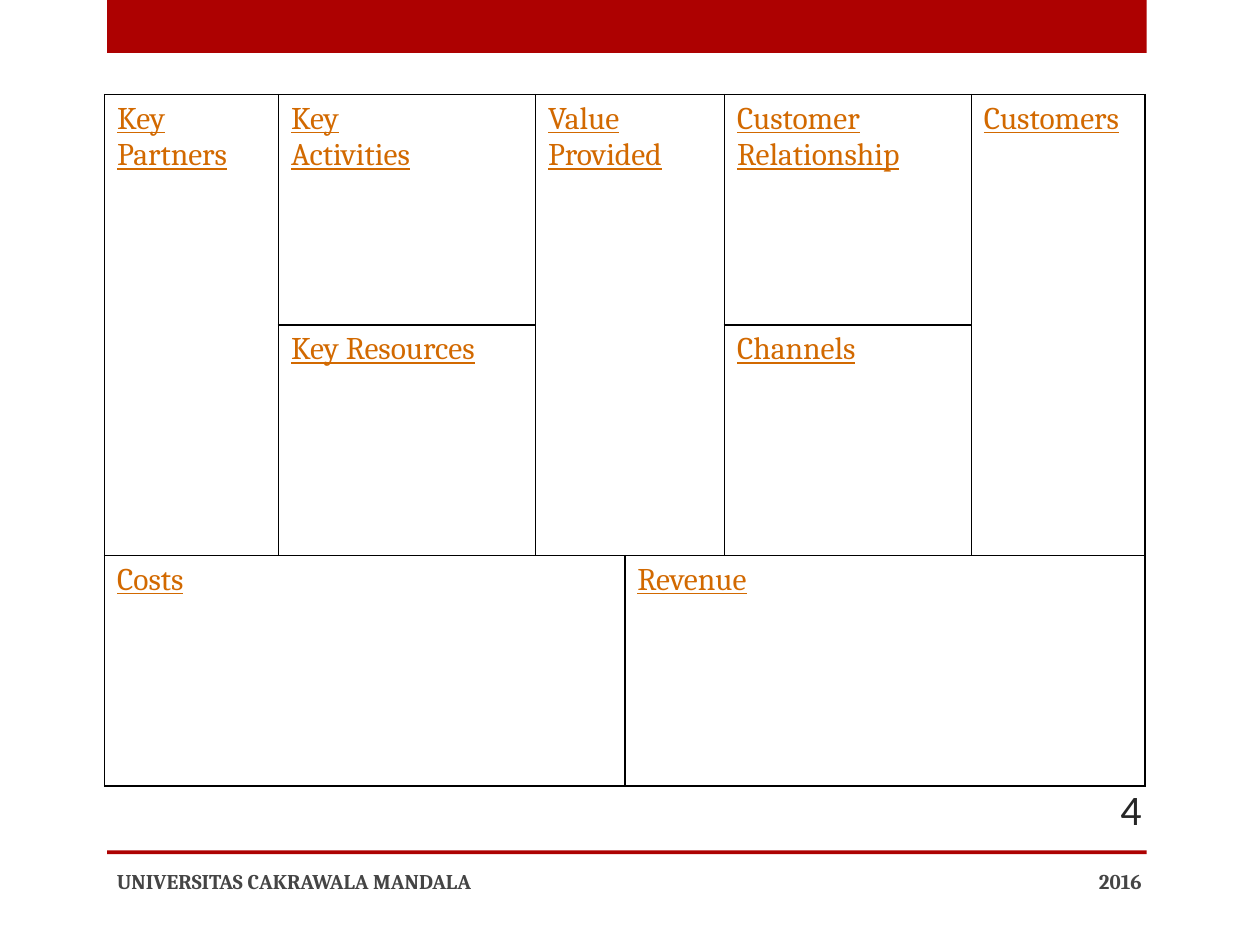
"""Builds a business model canvas slide with a header bar and footer."""
import pptx
import pptx.dml.color
import pptx.enum.shapes
import pptx.enum.text
import pptx.oxml.ns
import pptx.util
from lxml import etree

Inches = pptx.util.Inches
RGBColor = pptx.dml.color.RGBColor
ALIGN = pptx.enum.text.PP_ALIGN

RED = RGBColor(0xAD, 0x01, 0x01)
ORANGE = RGBColor(0xD2, 0x69, 0x00)
GRAY = RGBColor(0x45, 0x45, 0x45)
DARK = RGBColor(0x26, 0x26, 0x26)
BLACK = RGBColor(0, 0, 0)

COLUMN_WIDTHS = (1.38, 2.04, 0.71, 0.79, 1.96, 1.38)
ROW_HEIGHTS = (1.83, 1.83, 1.83)
CANVAS_BLOCKS = (
    (0, 0, 2, 1, "Key\nPartners"),
    (0, 1, 1, 1, "Key\nActivities"),
    (1, 1, 1, 1, "Key Resources"),
    (0, 2, 2, 2, "Value\nProvided"),
    (0, 4, 1, 1, "Customer\nRelationship"),
    (1, 4, 1, 1, "Channels"),
    (0, 5, 2, 1, "Customers"),
    (2, 0, 1, 3, "Costs"),
    (2, 3, 1, 3, "Revenue"),
)


class CanvasSlide:
    """Holds the page and its fonts, and draws each kind of element."""

    heading_font = "Cambria"
    number_font = "Calibri"

    def __init__(self, page):
        self.page = page

    def style(self, frame, name, size, color, **options):
        for para in frame.paragraphs:
            para.alignment = options.get("align", ALIGN.LEFT)
            font = para.font
            font.name, font.size = name, pptx.util.Pt(size)
            font.color.rgb = color
            font.bold = options.get("bold", False)
            font.underline = options.get("underline", False)

    def bar(self, top, height):
        bar = self.page.shapes.add_shape(
            pptx.enum.shapes.MSO_SHAPE.RECTANGLE,
            Inches(0.85), Inches(top), Inches(8.25), Inches(height))
        bar.shadow.inherit = False
        bar.fill.solid()
        bar.fill.fore_color.rgb = RED
        bar.line.fill.background()

    def label(self, text, left, top, width, name, size, color, **options):
        box = self.page.shapes.add_textbox(
            Inches(left), Inches(top), Inches(width), Inches(0.4))
        frame = box.text_frame
        frame.word_wrap = True
        frame.vertical_anchor = pptx.enum.text.MSO_ANCHOR.MIDDLE
        frame.text = text
        self.style(frame, name, size, color, **options)

    def border(self, cell):
        properties = cell._tc.get_or_add_tcPr()
        qn = pptx.oxml.ns.qn
        for side in ("lnL", "lnR", "lnT", "lnB"):
            line = etree.SubElement(properties, qn(f"a:{side}"), w=str(pptx.util.Pt(1)))
            fill = etree.SubElement(line, qn("a:solidFill"))
            etree.SubElement(fill, qn("a:srgbClr"), val=str(BLACK))

    def canvas(self, left, top):
        table = self.page.shapes.add_table(
            len(ROW_HEIGHTS), len(COLUMN_WIDTHS), Inches(left), Inches(top),
            Inches(sum(COLUMN_WIDTHS)), Inches(sum(ROW_HEIGHTS))).table
        table.first_row = table.horz_banding = False
        for column, width in zip(table.columns, COLUMN_WIDTHS):
            column.width = Inches(width)
        for row, height in zip(table.rows, ROW_HEIGHTS):
            row.height = Inches(height)
        for cell in table.iter_cells():
            self.border(cell)
            cell.fill.background()
        for row, column, row_span, column_span, text in CANVAS_BLOCKS:
            cell = table.cell(row, column)
            if row_span * column_span > 1:
                cell.merge(table.cell(row + row_span - 1, column + column_span - 1))
            cell.text = text
            self.style(cell.text_frame, self.heading_font, 18, ORANGE, underline=True)


def main():
    deck = pptx.Presentation()
    deck.slide_width, deck.slide_height = Inches(10), Inches(7.5)
    slide = CanvasSlide(deck.slides.add_slide(deck.slide_layouts[6]))
    slide.bar(0, 0.42)
    slide.bar(6.75, 0.03)
    slide.canvas(0.83, 0.75)
    slide.label("2016", 6.83, 6.79, 2.33, slide.heading_font, 12, GRAY,
                bold=True, align=ALIGN.RIGHT)
    slide.label("UNIVERSITAS CAKRAWALA MANDALA", 0.83, 6.79, 5.33,
                slide.heading_font, 12, GRAY, bold=True)
    slide.label("4", 8.33, 6.22, 0.83, slide.number_font, 24, DARK, align=ALIGN.RIGHT)
    deck.save("out.pptx")


if __name__ == "__main__":
    main()
